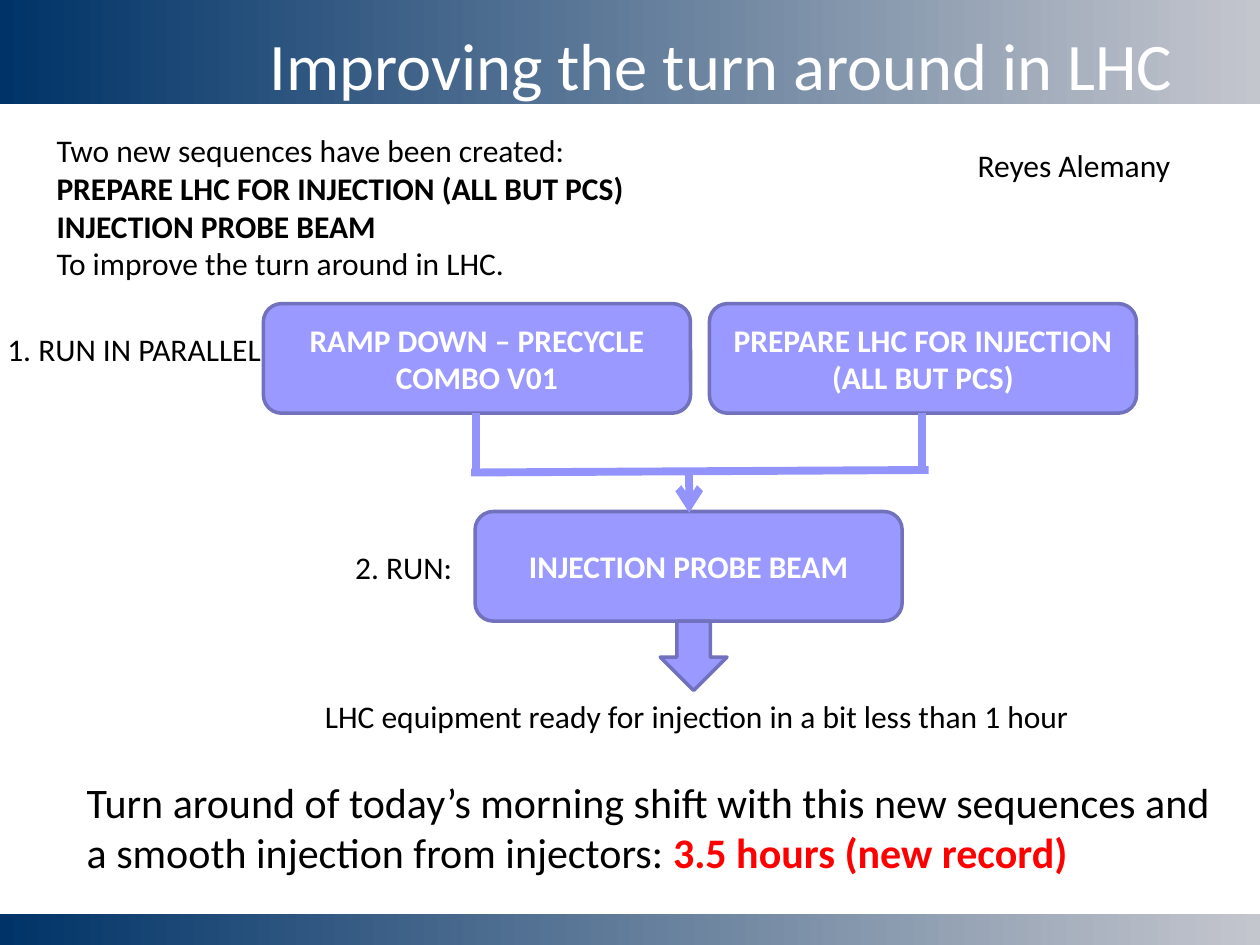
"""Build the slide on a faster LHC turn around."""
from pptx import Presentation, util as u
from pptx.dml.color import RGBColor
from pptx.enum import shapes, text
from pptx.oxml import parse_xml
from pptx.oxml.ns import nsdecls

NAVY = RGBColor(0x00, 0x33, 0x68)
SILVER = RGBColor(0xC4, 0xC6, 0xCD)
LILAC = RGBColor(0x99, 0x99, 0xFF)
VIOLET = RGBColor(0x71, 0x71, 0xBD)
LINK = RGBColor(0x93, 0x93, 0xFC)
WHITE = RGBColor(0xFF, 0xFF, 0xFF)
BLACK = RGBColor(0x00, 0x00, 0x00)
RED = RGBColor(0xFF, 0x00, 0x00)

deck = Presentation()
deck.slide_width, deck.slide_height = u.Inches(10), u.Inches(7.5)
page = deck.slides.add_slide(deck.slide_layouts[6])
COLUMN, ROW = deck.slide_width / 100, deck.slide_height / 75


def place(left, top, width, height):
    """Turn columns and rows into slide lengths."""
    return [round(n * unit) for n, unit in
            zip((left, top, width, height), (COLUMN, ROW, COLUMN, ROW))]


def write(box, content, size=18, colour=BLACK, bold=False, align=text.PP_ALIGN.LEFT,
          anchor=text.MSO_ANCHOR.TOP, wrap=True, grow=True):
    """Fill a box with paragraphs of (words, format changes) spans."""
    frame = box.text_frame
    frame.word_wrap, frame.vertical_anchor = wrap, anchor
    frame.auto_size = text.MSO_AUTO_SIZE.SHAPE_TO_FIT_TEXT if grow else text.MSO_AUTO_SIZE.NONE
    for index, spans in enumerate(content):
        para = frame.add_paragraph() if index else frame.paragraphs[0]
        para.alignment = align
        for words, changes in spans:
            span = para.add_run()
            span.text = words
            span.font.name, span.font.size = "Calibri", u.Pt(size)
            span.font.bold = changes.get("bold", bold)
            span.font.color.rgb = changes.get("colour", colour)


for top, height in ((72.5, 2.5), (0, 8.3)):
    band = page.shapes.add_shape(shapes.MSO_SHAPE.RECTANGLE, *place(0, top, 100, height))
    band.shadow.inherit = False
    band.line.fill.background()
    band.fill.gradient()
    band.fill.gradient_angle = 0
    for stop, colour in zip(band.fill.gradient_stops, (NAVY, SILVER)):
        stop.color.rgb = colour

title = page.shapes.add_textbox(*place(5.9, -3, 88.2, 16.1))
write(title, [[("Improving the turn around in LHC", {})]], size=38, colour=WHITE,
      align=text.PP_ALIGN.RIGHT, anchor=text.MSO_ANCHOR.MIDDLE, grow=False)

intro = page.shapes.add_textbox(*place(3.5, 9.9, 94.1, 13.1))
write(intro, [
    [("Two new sequences have been created:", {})],
    [("PREPARE LHC FOR INJECTION (ALL BUT PCS)", {"bold": True})],
    [("INJECTION PROBE BEAM", {"bold": True})],
    [("To improve the turn around in LHC.", {})],
])

STEP_WIDTH, STEP_HEIGHT = 33.9, 8.7
UPPER, LOWER = 24.1, 40.6
steps = (
    (20.9, UPPER, "RAMP DOWN – PRECYCLE COMBO V01"),
    (56.3, UPPER, "PREPARE LHC FOR INJECTION (ALL BUT PCS)"),
    (37.7, LOWER, "INJECTION PROBE BEAM"),
)
for left, top, name in steps:
    step = page.shapes.add_shape(shapes.MSO_SHAPE.ROUNDED_RECTANGLE,
                                 *place(left, top, STEP_WIDTH, STEP_HEIGHT))
    write(step, [[(name, {})]], colour=WHITE, bold=True, align=text.PP_ALIGN.CENTER,
          anchor=text.MSO_ANCHOR.MIDDLE, grow=False)

arrow = page.shapes.add_shape(shapes.MSO_SHAPE.DOWN_ARROW,
                              *place(52.4, LOWER + STEP_HEIGHT, 5.3, 5.5))
for shape in list(page.shapes)[-len(steps) - 1:]:
    shape.shadow.inherit = False
    shape.fill.solid()
    shape.fill.fore_color.rgb = LILAC
    shape.line.color.rgb = VIOLET
    shape.line.width = u.Pt(2)

BASE, JOIN = UPPER + STEP_HEIGHT, 37.5
links = (
    (37.8, BASE, 37.8, JOIN),
    (73.2, BASE, 73.2, JOIN),
    (37.4, JOIN, 73.7, JOIN - 0.2),
    (54.7, JOIN, 54.7, LOWER + 0.1),
)
for ends in links:
    link = page.shapes.add_connector(shapes.MSO_CONNECTOR.STRAIGHT, *place(*ends))
    link.line.color.rgb = LINK
    link.line.width = u.Pt(4.5)
    link._element.spPr.append(parse_xml(f"<a:effectLst {nsdecls('a')}/>"))
link.line._get_or_add_ln().append(parse_xml(f'<a:tailEnd {nsdecls("a")} type="arrow"/>'))

labels = (
    (-0.4, 25.7, 22.4, "1. RUN IN PARALLEL"),
    (27.2, 43, 9.8, "2. RUN:"),
    (24.8, 54.8, 61.8, "LHC equipment ready for injection in a bit less than 1 hour"),
    (76.6, 11.1, 17.5, "Reyes Alemany"),
)
for left, top, width, words in labels:
    label = page.shapes.add_textbox(*place(left, top, width, 4))
    write(label, [[(words, {})]], wrap=False)

result = page.shapes.add_textbox(*place(5.9, 61.1, 91.3, 9.1))
write(result, [[
    ("Turn around of today’s morning shift with this new sequences and "
     "a smooth injection from injectors: ", {}),
    ("3.5 hours (new record)", {"colour": RED, "bold": True}),
]], size=24)

deck.save("out.pptx")
